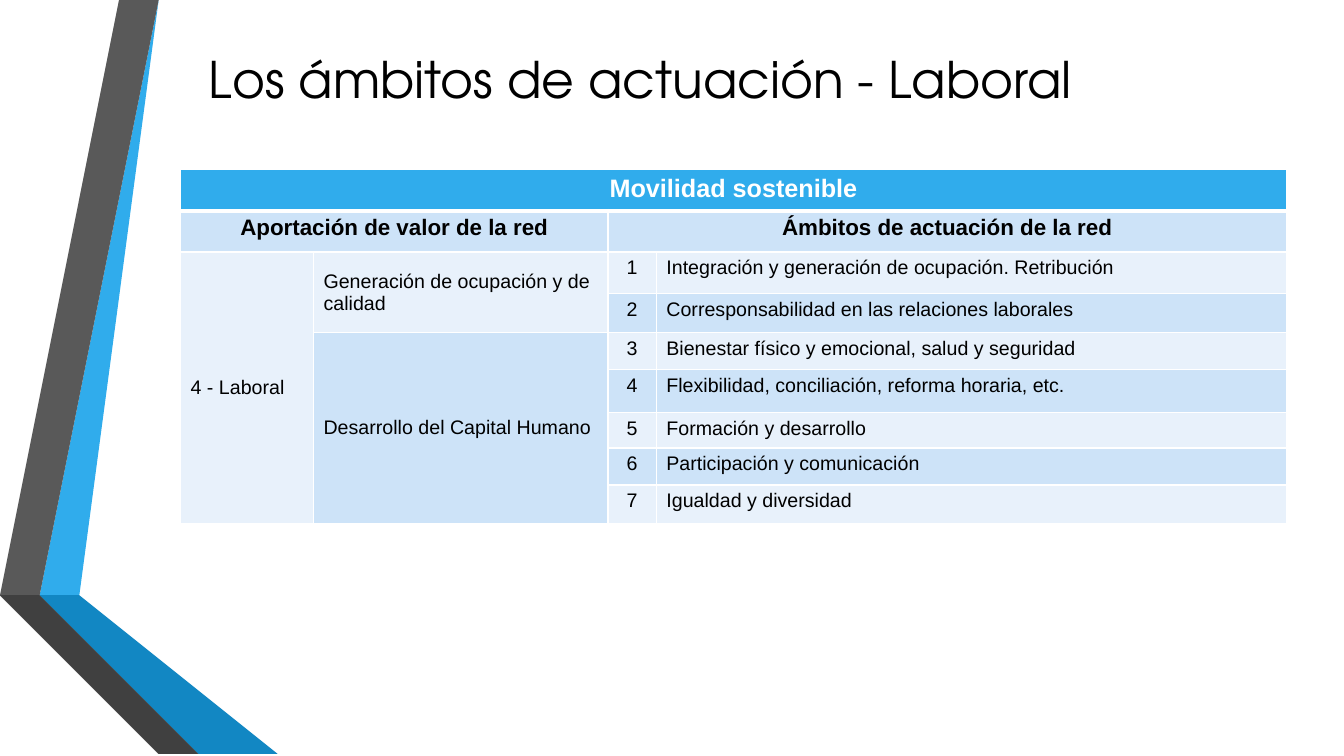
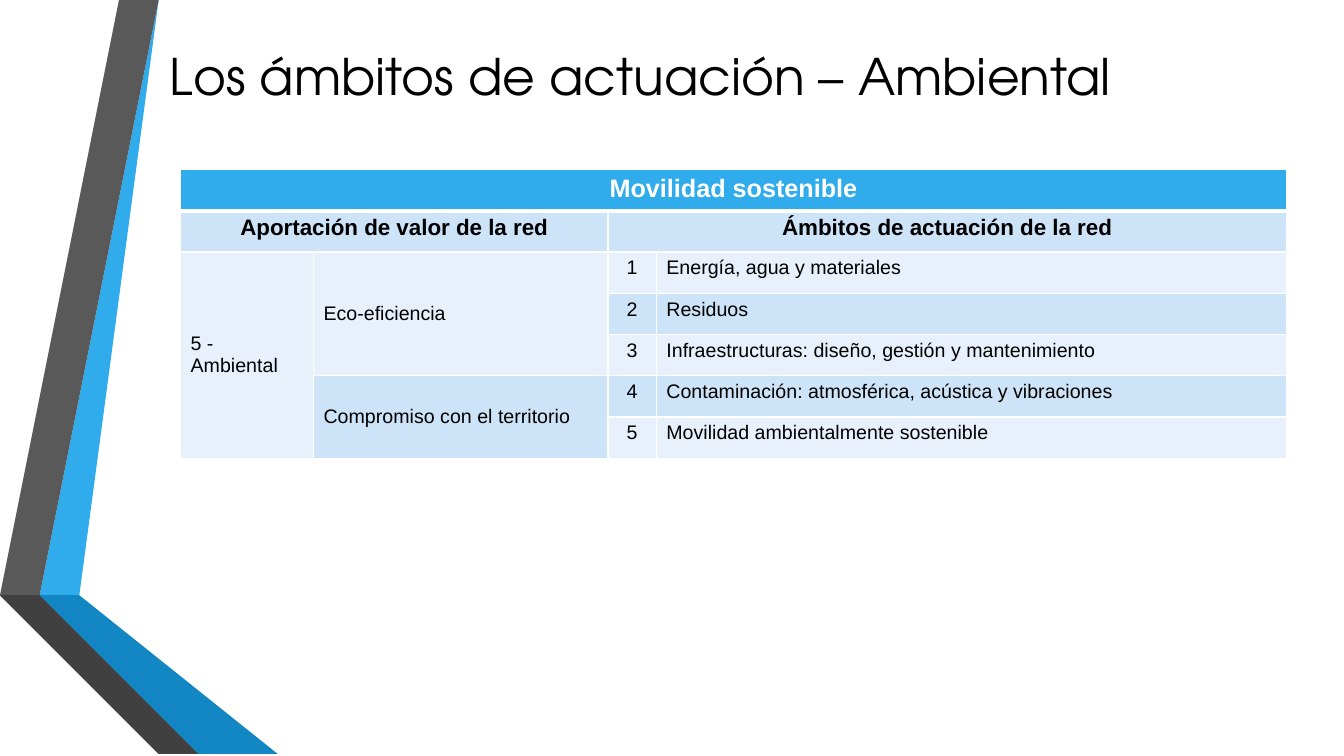
"""Build two slides on the labour and environmental fields of action."""
from lxml import etree
from pptx import Presentation
from pptx import util as u
from pptx.dml import color
from pptx.enum import text
from pptx.oxml import ns

WHITE, BLACK, SKY, PALE, LIGHT = "FFFFFF", "000000", "30ACEC", "CDE3F8", "E8F1FB"
CENTER, LEFT = text.PP_ALIGN.CENTER, text.PP_ALIGN.LEFT
TOP, MIDDLE = text.MSO_ANCHOR.TOP, text.MSO_ANCHOR.MIDDLE

RIBBONS = [
    (SKY, [(1.27, 14.68), (1.96, 14.81), (4.39, 0), (3.68, 0)]),
    ("595959", [(3.53, 0), (2.82, 0), (0.41, 14.55), (1.12, 14.66)]),
    ("262626", [(0.41, 14.55), (3.68, 19.05), (3.84, 19.05)]),
    ("0C5A82", [(1.27, 14.71), (5.28, 19.05), (5.44, 19.05)]),
    ("1287C3", [(1.27, 14.68), (1.27, 14.71), (5.44, 19.05), (7.19, 19.05), (1.96, 14.81)]),
    ("404040", [(5.13, 19.05), (1.22, 14.81), (1.09, 14.68), (1.12, 14.66),
                (0.41, 14.55), (3.84, 19.05)]),
]
COLUMN_WIDTHS = [3.35, 7.42, 1.22, 15.88]
ROW_HEIGHT = 1.04

FIELDS = [
    ("Los ámbitos de actuación - Laboral", 0.97, "4 - Laboral", [
        ("Generación de ocupación y de calidad", [
            ("Integración y generación de ocupación. Retribución", ROW_HEIGHT),
            ("Corresponsabilidad en las relaciones laborales", 0.99)]),
        ("Desarrollo del Capital Humano", [
            ("Bienestar físico y emocional, salud y seguridad", 0.93),
            ("Flexibilidad, conciliación, reforma horaria, etc.", 1.09),
            ("Formación y desarrollo", 0.89),
            ("Participación y comunicación", 0.93),
            ("Igualdad y diversidad", 0.97)])]),
    ("Los ámbitos de actuación – Ambiental", 0.89, "5 - Ambiental", [
        ("Eco-eficiencia", [
            ("Energía, agua y materiales", ROW_HEIGHT),
            ("Residuos", ROW_HEIGHT),
            ("Infraestructuras: diseño, gestión y mantenimiento", ROW_HEIGHT)]),
        ("Compromiso con el territorio", [
            ("Contaminación: atmosférica, acústica y vibraciones", ROW_HEIGHT),
            ("Movilidad ambientalmente sostenible", ROW_HEIGHT)])]),
]


def paint(fill, hex_color):
    fill.solid()
    fill.fore_color.rgb = color.RGBColor.from_string(hex_color)


def write(frame, words, size, align=LEFT, anchor=TOP, ink=BLACK, bold=False, face="Arial"):
    frame.word_wrap = True
    frame.vertical_anchor = anchor
    paragraph = frame.paragraphs[0]
    paragraph.alignment = align
    run = paragraph.add_run()
    run.text = words
    run.font.size = u.Pt(size)
    run.font.name = face
    run.font.bold = bold
    paint(run.font.fill, ink)


deck = Presentation()
deck.slide_width, deck.slide_height = u.Cm(33.87), u.Cm(19.05)

for heading, heading_top, field, groups in FIELDS:
    slide = deck.slides.add_slide(deck.slide_layouts[6])

    for tint, corners in RIBBONS:
        outline = slide.shapes.build_freeform(*corners[0], scale=u.Cm(1))
        outline.add_line_segments(corners[1:], close=True)
        ribbon = outline.convert_to_shape()
        ribbon.shadow.inherit = False
        ribbon.line.fill.background()
        paint(ribbon.fill, tint)

    title = slide.shapes.add_textbox(u.Cm(2.54), u.Cm(heading_top), u.Cm(27.2), u.Cm(2))
    write(title.text_frame, heading, 36, CENTER, MIDDLE, face="TeX Gyre Adventor")

    topics = [topic for _, members in groups for topic in members]
    heights = [ROW_HEIGHT, ROW_HEIGHT] + [height for _, height in topics]
    table = slide.shapes.add_table(
        len(heights), len(COLUMN_WIDTHS), u.Cm(4.55), u.Cm(4.27),
        u.Cm(sum(COLUMN_WIDTHS)), u.Cm(sum(heights))).table
    for column, width in zip(table.columns, COLUMN_WIDTHS):
        column.width = u.Cm(width)

    for r, height in enumerate(heights):
        table.rows[r].height = u.Cm(height)
        for c in range(len(COLUMN_WIDTHS)):
            cell = table.cell(r, c)
            properties = cell._tc.get_or_add_tcPr()
            for side in ("lnL", "lnR", "lnT", "lnB"):
                thick = (r, side) in ((0, "lnB"), (1, "lnT"))
                edge = etree.SubElement(properties, ns.qn(f"a:{side}"), w=str(u.Pt(3 if thick else 1)))
                edge_fill = etree.SubElement(edge, ns.qn("a:solidFill"))
                etree.SubElement(edge_fill, ns.qn("a:srgbClr"), val=WHITE)
            stripe = PALE if r % 2 and c != 0 or r == 1 else LIGHT
            paint(cell.fill, SKY if r == 0 else stripe)

    table.cell(0, 0).merge(table.cell(0, 3))
    write(table.cell(0, 0).text_frame, "Movilidad sostenible", 18, CENTER, ink=WHITE, bold=True)
    for c, label in ((0, "Aportación de valor de la red"), (2, "Ámbitos de actuación de la red")):
        table.cell(1, c).merge(table.cell(1, c + 1))
        write(table.cell(1, c).text_frame, label, 16, CENTER, bold=True)

    table.cell(2, 0).merge(table.cell(len(heights) - 1, 0))
    write(table.cell(2, 0).text_frame, field, 14)
    table.cell(2, 0).vertical_anchor = MIDDLE

    first = 2
    for (group, members), shade in zip(groups, (LIGHT, PALE)):
        last = first + len(members) - 1
        group_cell = table.cell(first, 1)
        group_cell.merge(table.cell(last, 1))
        paint(group_cell.fill, shade)
        write(group_cell.text_frame, group, 14)
        group_cell.vertical_anchor = MIDDLE
        first = last + 1

    for number, (topic, _) in enumerate(topics, 1):
        write(table.cell(number + 1, 2).text_frame, str(number), 14, CENTER)
        write(table.cell(number + 1, 3).text_frame, topic, 14)

deck.save("out.pptx")
